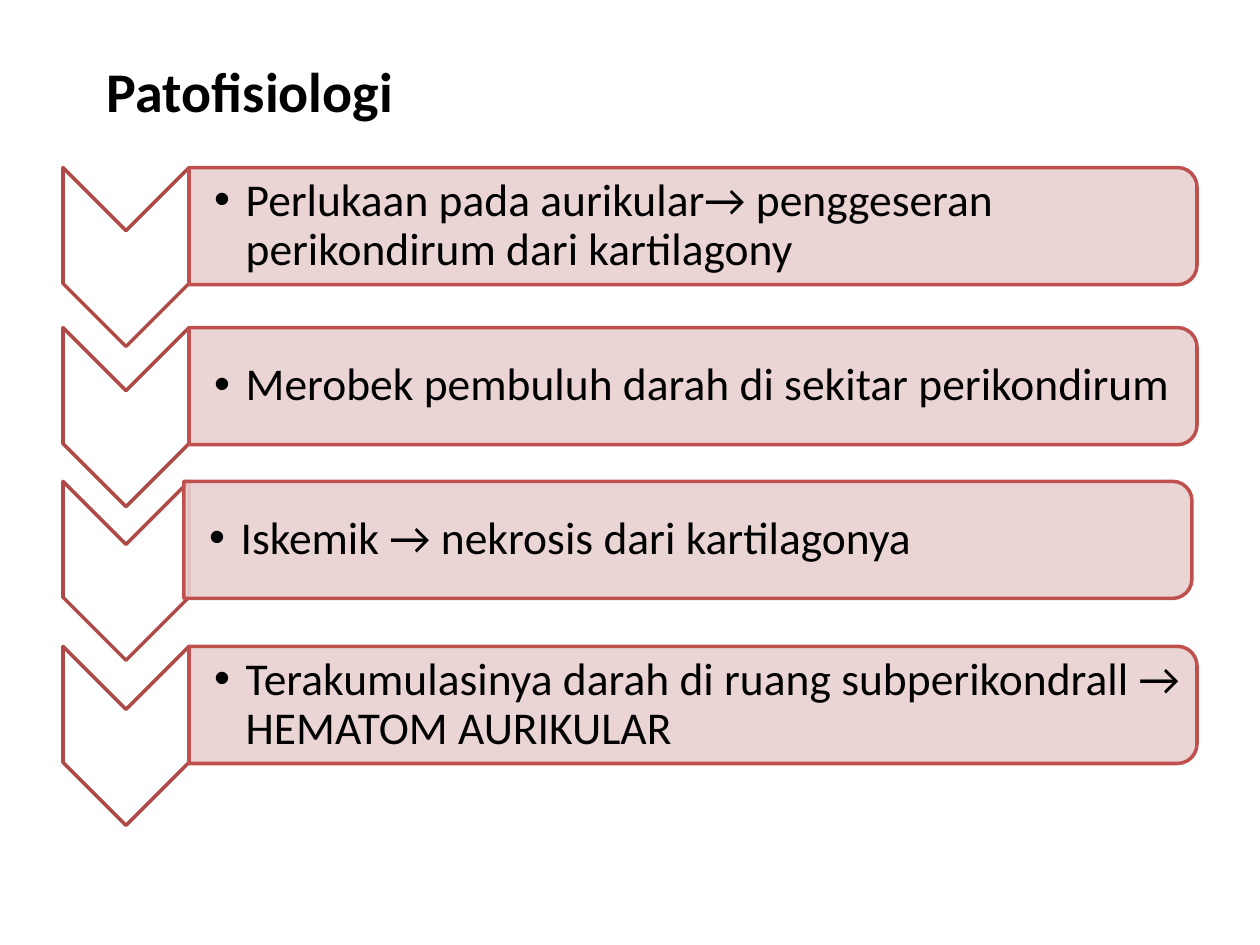
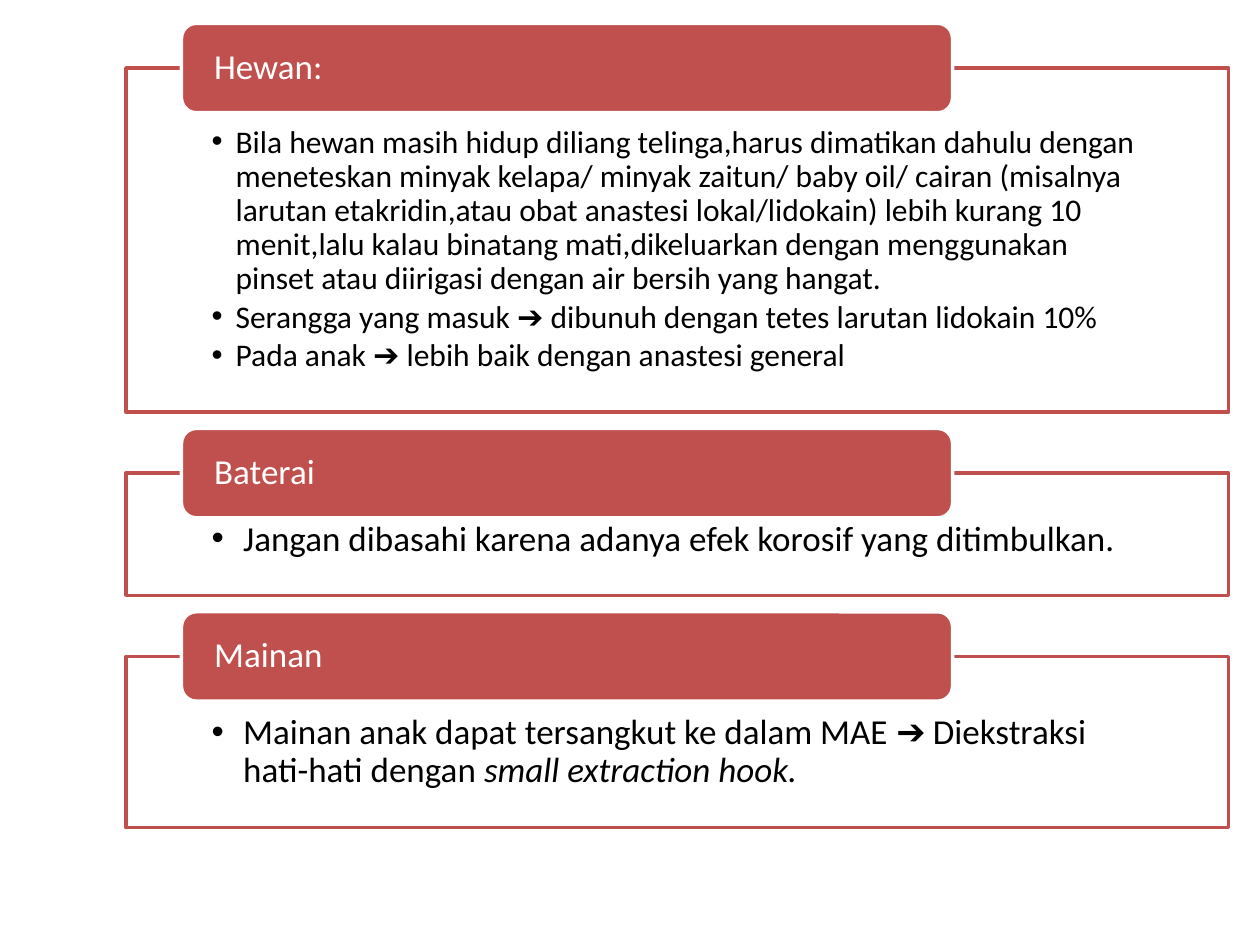
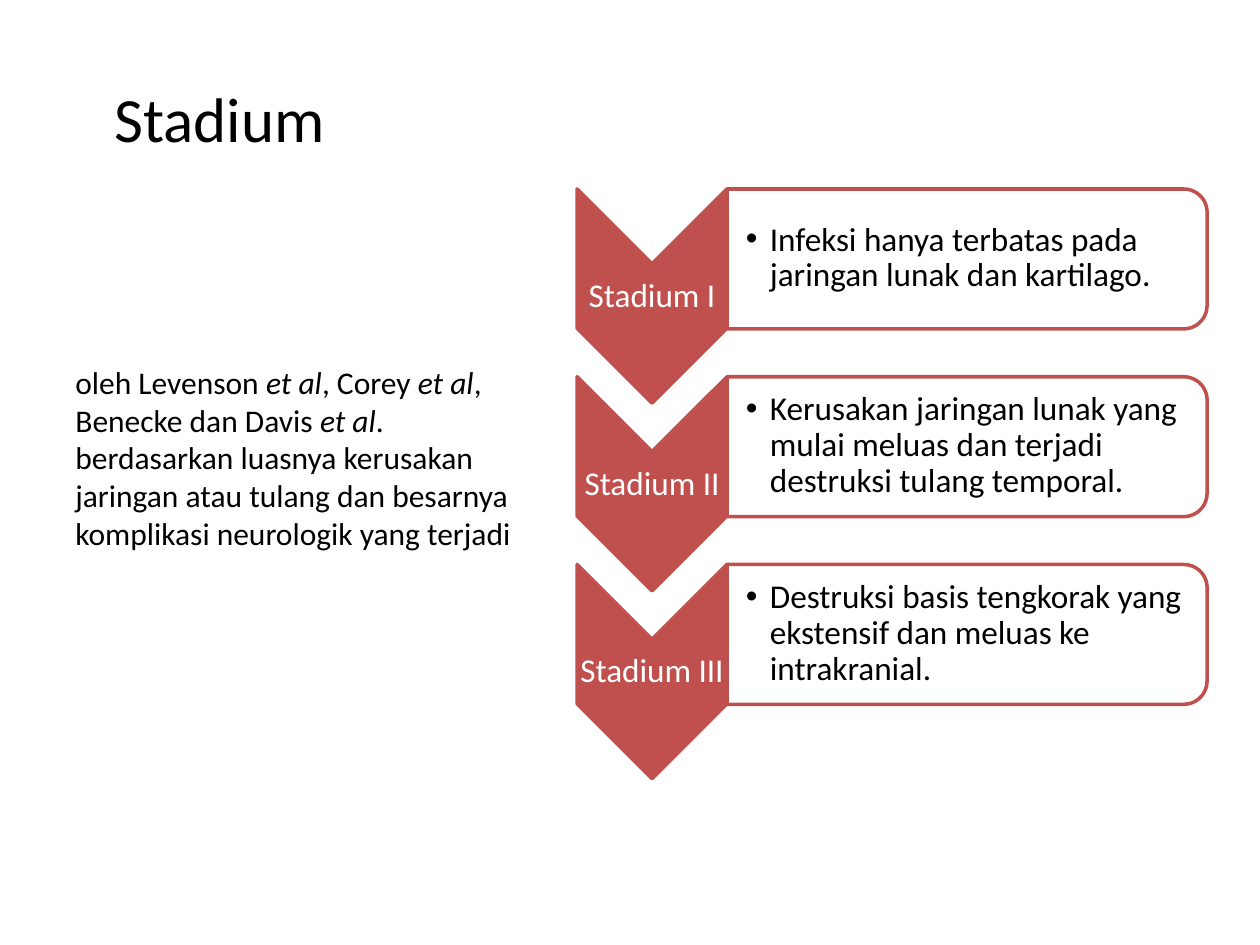
from lxml.etree import SubElement
from pptx import Presentation
from pptx.dml.color import RGBColor
from pptx.enum.shapes import MSO_SHAPE
from pptx.enum.text import MSO_ANCHOR, PP_ALIGN
from pptx.oxml.ns import qn
from pptx.util import Inches, Pt

COLORS = {"red": "C0504D", "dark": "AE4946", "pink": "E8D0D0", "white": "FFFFFF", "black": "000000"}
FONT = "Calibri"

prs = Presentation()
prs.slide_width, prs.slide_height = Inches(10), Inches(7.5)
COL = prs.slide_width / 100
ROW = prs.slide_height / 75


def add_shape(s, kind, x, y, w, h, fill, line, turned=False, alpha=100):
    if turned:
        x, y, w, h = x + (w - h) / 2, y + (h - w) / 2, h, w
    sp = s.shapes.add_shape(kind, int(x * COL), int(y * ROW), int(w * COL), int(h * ROW))
    sp.rotation = 90 if turned else 0
    sp.shadow.inherit = False
    sp.fill.solid()
    sp.fill.fore_color.rgb = RGBColor.from_string(COLORS[fill])
    sp.line.color.rgb = RGBColor.from_string(COLORS[line])
    sp.line.width = Pt(2)
    if alpha < 100:
        clr = sp._element.spPr.find(qn("a:solidFill"))[0]
        SubElement(clr, qn("a:alpha"), val=str(alpha * 1000))


def add_text(s, x, y, w, h, paras, size, color="black", ins=(1, 0.5, 1, 0.5), bullet=0,
             after=0, font=None, **fmt):
    tf = s.shapes.add_textbox(int(x * COL), int(y * ROW), int(w * COL), int(h * ROW)).text_frame
    sides = ("margin_left", "margin_top", "margin_right", "margin_bottom")
    frame = {"word_wrap": True, "vertical_anchor": fmt.pop("anchor", MSO_ANCHOR.TOP)}
    frame.update({side: int(v * COL) for side, v in zip(sides, ins)})
    for k, v in frame.items():
        setattr(tf, k, v)
    for i, text in enumerate(paras):
        p = tf.paragraphs[0] if i == 0 else tf.add_paragraph()
        if bullet:
            pPr = p._p.get_or_add_pPr()
            pPr.set("marL", str(int(bullet * COL)))
            pPr.set("indent", str(-int(bullet * COL)))
            SubElement(pPr, qn("a:buFont"), typeface="Arial")
            SubElement(pPr, qn("a:buChar"), char="•")
        for k, v in {"space_after": Pt(size * after), **fmt}.items():
            setattr(p, k, v)
        for n, part in enumerate(text.split("*")):
            r = p.add_run()
            r.text = part
            for k, v in {"name": FONT, "size": Pt(size), "italic": n % 2 == 1, **(font or {})}.items():
                setattr(r.font, k, v)
            r.font.color.rgb = RGBColor.from_string(COLORS[color])


MIDDLE = {"anchor": MSO_ANCHOR.MIDDLE, "line_spacing": 0.9}
BODY = {"after": 0.15, "line_spacing": 0.9}
HEAD = {"after": 0.35, "color": "white", **MIDDLE}

s = prs.slides.add_slide(prs.slide_layouts[6])
steps = [
    (13.3, 15, "Perlukaan pada aurikular→ penggeseran perikondirum dari kartilagony"),
    (26, 15, "Merobek pembuluh darah di sekitar perikondirum"),
    (38.2, 14.6, "Iskemik → nekrosis dari kartilagonya"),
    (51.3, 15, "Terakumulasinya darah di ruang subperikondrall → HEMATOM AURIKULAR"),
]
for y, x, text in steps:
    add_shape(s, MSO_SHAPE.CHEVRON, 5, y, 10, 14.2, "white", "dark", turned=True)
    add_shape(s, MSO_SHAPE.ROUND_2_SAME_RECTANGLE, x, y, 80, 9.3, "pink", "red", turned=True, alpha=90)
    add_text(s, x, y + 0.5, 79.6, 8.3, [text], 26, ins=(2, 0.2, 0.2, 0.2), bullet=2.5,
             after=0.15, **MIDDLE)
add_text(s, 7.5, 4, 58, 6.4, ["Patofisiologi"], 32, font={"bold": True})

s = prs.slides.add_slide(prs.slide_layouts[6])
objects = [
    ("Hewan:", 27.3, 18, 1.9, [
        "Bila hewan masih hidup diliang telinga,harus dimatikan dahulu dengan meneteskan minyak kelapa/ "
        "minyak zaitun/ baby oil/ cairan (misalnya larutan etakridin,atau obat anastesi lokal/lidokain) "
        "lebih kurang 10 menit,lalu kalau binatang mati,dikeluarkan dengan menggunakan pinset atau "
        "diirigasi dengan air bersih yang hangat.",
        "Serangga yang masuk ➔ dibunuh dengan tetes larutan lidokain 10%",
        "Pada anak ➔ lebih baik dengan anastesi general"]),
    ("Baterai", 9.7, 20, 2.5, ["Jangan dibasahi karena adanya efek korosif yang ditimbulkan."]),
    ("Mainan", 13.6, 20, 2.5, [
        "Mainan anak dapat tersangkut ke dalam MAE ➔ Diekstraksi hati-hati dengan *small extraction hook."]),
]
y = 5.4
for head, h, size, bullet, paras in objects:
    add_shape(s, MSO_SHAPE.RECTANGLE, 10, y, 87.5, h, "white", "red", alpha=90)
    add_shape(s, MSO_SHAPE.ROUNDED_RECTANGLE, 14.4, y - 3.55, 61.2, 7.1, "red", "white")
    add_text(s, 14.7, y - 3.2, 60.6, 6.4, [head], 20, ins=(2.3, 0, 2.3, 0), **HEAD)
    add_text(s, 10, y, 87.5, h, paras, size, ins=(6.8, 4.6, 6.8, 0), bullet=bullet, **BODY)
    y += h + 4.85

s = prs.slides.add_slide(prs.slide_layouts[6])
stages = [
    ("Stadium I", "Infeksi hanya terbatas pada jaringan lunak dan kartilago."),
    ("Stadium II", "Kerusakan jaringan lunak yang mulai meluas dan terjadi destruksi tulang temporal."),
    ("Stadium III", "Destruksi basis tengkorak yang ekstensif dan meluas ke intrakranial."),
]
for i, (stage, text) in enumerate(stages):
    y = 15 + 14.9 * i
    add_shape(s, MSO_SHAPE.CHEVRON, 45.8, y, 11.9, 17, "red", "red", turned=True)
    add_text(s, 45.8, y + 6, 11.9, 5.1, [stage], 19, ins=[0.1] * 4, alignment=PP_ALIGN.CENTER, **HEAD)
    add_shape(s, MSO_SHAPE.ROUND_2_SAME_RECTANGLE, 57.7, y, 38.1, 11.1, "white", "red", turned=True, alpha=90)
    add_text(s, 57.7, y + 0.5, 37.5, 10, [text], 19, ins=(1.5, 0.1, 0.1, 0.1), bullet=1.9,
             after=0.15, **MIDDLE)
add_text(s, 8.1, 5.8, 75.4, 11.8, ["Stadium"], 36)
add_text(s, 5, 28.3, 38.5, 16.2, [
    "oleh Levenson *et al*, Corey *et al*, Benecke dan Davis *et al*. berdasarkan luasnya kerusakan "
    "jaringan atau tulang dan besarnya komplikasi neurologik yang terjadi"], 18)

prs.save("out.pptx")
